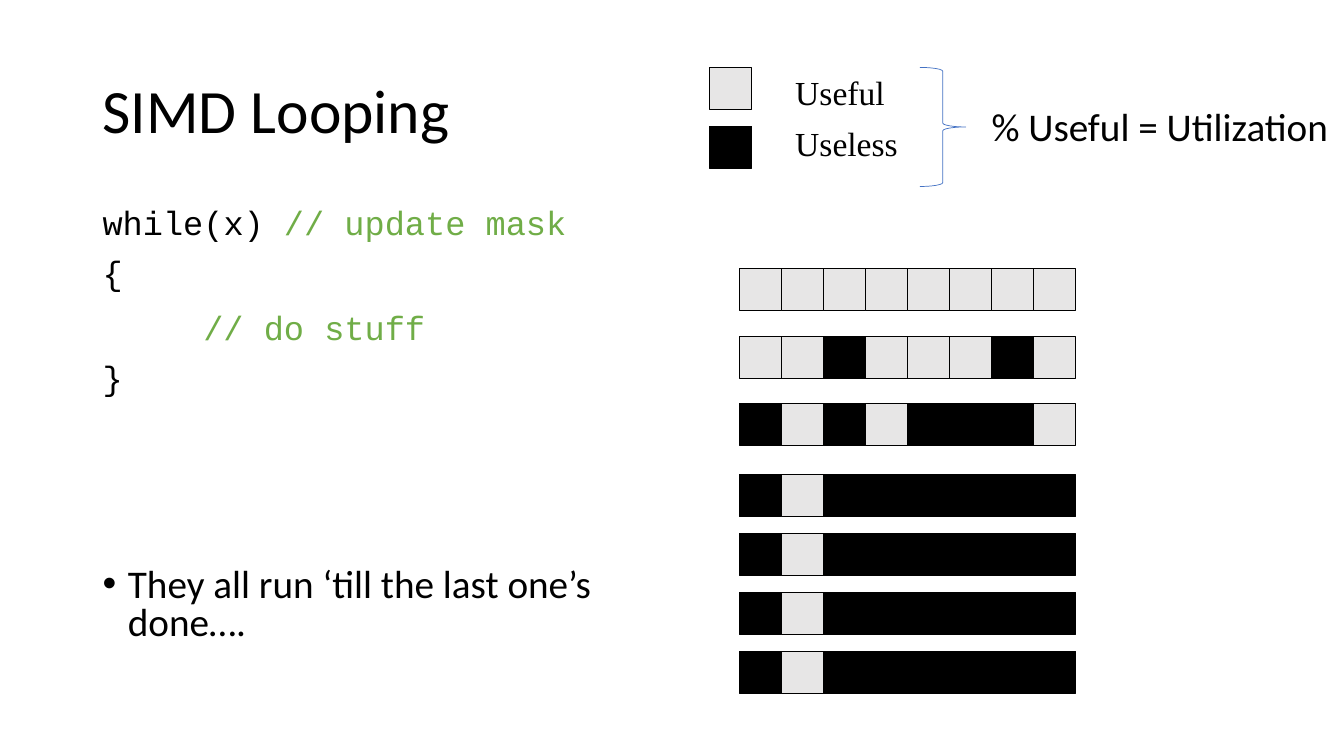
from lxml import etree
from pptx import Presentation
from pptx.dml.color import RGBColor
from pptx.enum.shapes import MSO_SHAPE
from pptx.enum.text import MSO_ANCHOR, MSO_AUTO_SIZE, PP_ALIGN
from pptx.oxml.ns import qn
from pptx.util import Cm, Pt

RECTANGLE = MSO_SHAPE.RECTANGLE
RIGHT_BRACE = MSO_SHAPE.RIGHT_BRACE
MIDDLE, TOP = MSO_ANCHOR.MIDDLE, MSO_ANCHOR.TOP
NO_FIT = MSO_AUTO_SIZE.NONE
LEFT = PP_ALIGN.LEFT

BLACK = RGBColor(0x00, 0x00, 0x00)
LIGHT_GRAY = RGBColor(0xE7, 0xE6, 0xE6)
GREEN = RGBColor(0x70, 0xAD, 0x47)
BLUE = RGBColor(0x44, 0x72, 0xC4)

SANS, CODE, SERIF = "Calibri", "Courier New", "Times New Roman"
CELL = 1.06
LANES_LEFT = 18.63
USEFUL = "U"
LANE_ROWS = [
    (6.77, "UUUUUUUU"),
    (8.47, "UU-UUU-U"),
    (10.16, "-U-U---U"),
    (11.96, "-U------"),
    (13.44, "-U------"),
    (14.93, "-U------"),
    (16.41, "-U------"),
]


def format_span(span, font, size, color=BLACK):
    span.font.name = font
    span.font.size = Pt(size)
    span.font.color.rgb = color


def place(shape, left, top, width, height):
    shape.left, shape.top = Cm(left), Cm(top)
    shape.width, shape.height = Cm(width), Cm(height)


def format_para(para, line_spacing, before, margin=0, indent=0, bullet=None):
    para.alignment = LEFT
    para.line_spacing = line_spacing
    para.space_before = Pt(before)
    props = para._p.get_or_add_pPr()
    props.set("marL", str(Cm(margin)))
    props.set("indent", str(Cm(indent)))
    if bullet:
        etree.SubElement(props, qn("a:buFont"), typeface="Arial")
        etree.SubElement(props, qn("a:buChar"), char=bullet)
    else:
        etree.SubElement(props, qn("a:buNone"))


def fill_title(title):
    place(title, 2.33, 1.01, 29.21, 3.68)
    frame = title.text_frame
    frame.text = "SIMD Looping"
    frame.vertical_anchor = MIDDLE
    frame.auto_size = NO_FIT
    format_para(frame.paragraphs[0], 0.9, 0)
    format_span(frame.paragraphs[0].runs[0], SANS, 44)


def fill_body(body):
    place(body, 2.33, 5.07, 14.4, 12.09)
    frame = body.text_frame
    frame.text = "while(x) \n{\n// do stuff\n}\nThey all run ‘till the last one’s done…."
    frame.vertical_anchor = TOP
    frame.auto_size = NO_FIT
    loop, opening, work, closing, remark = frame.paragraphs
    loop.add_run().text = "// update mask"
    for para in (loop, opening, closing):
        format_para(para, 0.9, 10)
    format_para(work, 0.9, 13, margin=2.54)
    format_para(remark, 0.8, 122, margin=0.64, indent=-0.64, bullet="•")
    for para in (loop, opening, work, closing):
        for span in para.runs:
            color = GREEN if span.text.startswith("//") else BLACK
            format_span(span, CODE, 24, color)
    format_span(remark.runs[0], SANS, 28)


def add_cell(shapes, left, top, useful):
    cell = shapes.add_shape(RECTANGLE, Cm(left), Cm(top), Cm(CELL), Cm(CELL))
    cell.shadow.inherit = False
    cell.fill.solid()
    cell.fill.fore_color.rgb = LIGHT_GRAY if useful else BLACK
    cell.line.color.rgb = BLACK
    cell.line.width = Pt(0.75)


def add_lanes(page, top, lanes):
    group = page.shapes.add_group_shape()
    for column, state in enumerate(lanes):
        add_cell(group.shapes, LANES_LEFT + column * CELL, top, state == USEFUL)


def add_label(page, text, left, top, width, height, font, size, wrap=True):
    box = page.shapes.add_textbox(Cm(left), Cm(top), Cm(width), Cm(height))
    frame = box.text_frame
    frame.word_wrap = wrap
    frame.text = text
    format_span(frame.paragraphs[0].runs[0], font, size)


def add_brace(page, left, top, width, height):
    brace = page.shapes.add_shape(
        RIGHT_BRACE, Cm(left), Cm(top), Cm(width), Cm(height))
    brace.shadow.inherit = False
    brace.fill.background()
    brace.line.color.rgb = BLUE
    brace.line.width = Pt(0.5)


def main():
    deck = Presentation()
    deck.slide_width, deck.slide_height = Cm(33.87), Cm(19.05)
    page = deck.slides.add_slide(deck.slide_layouts[1])
    fill_title(page.shapes.title)
    fill_body(page.placeholders[1])
    for top, lanes in LANE_ROWS:
        add_lanes(page, top, lanes)
    add_cell(page.shapes, 17.89, 1.7, True)
    add_cell(page.shapes, 17.89, 3.18, False)
    add_label(page, "Useful", 19.79, 1.7, 3.18, 1.27, SERIF, 24)
    add_label(page, "Useless", 19.79, 2.97, 3.18, 1.27, SERIF, 24)
    add_brace(page, 23.18, 1.7, 1.16, 3.0)
    add_label(page, "% Useful = Utilization", 24.74, 2.46, 9.09, 1.45,
              SANS, 28, wrap=False)
    deck.save("out.pptx")


if __name__ == "__main__":
    main()
